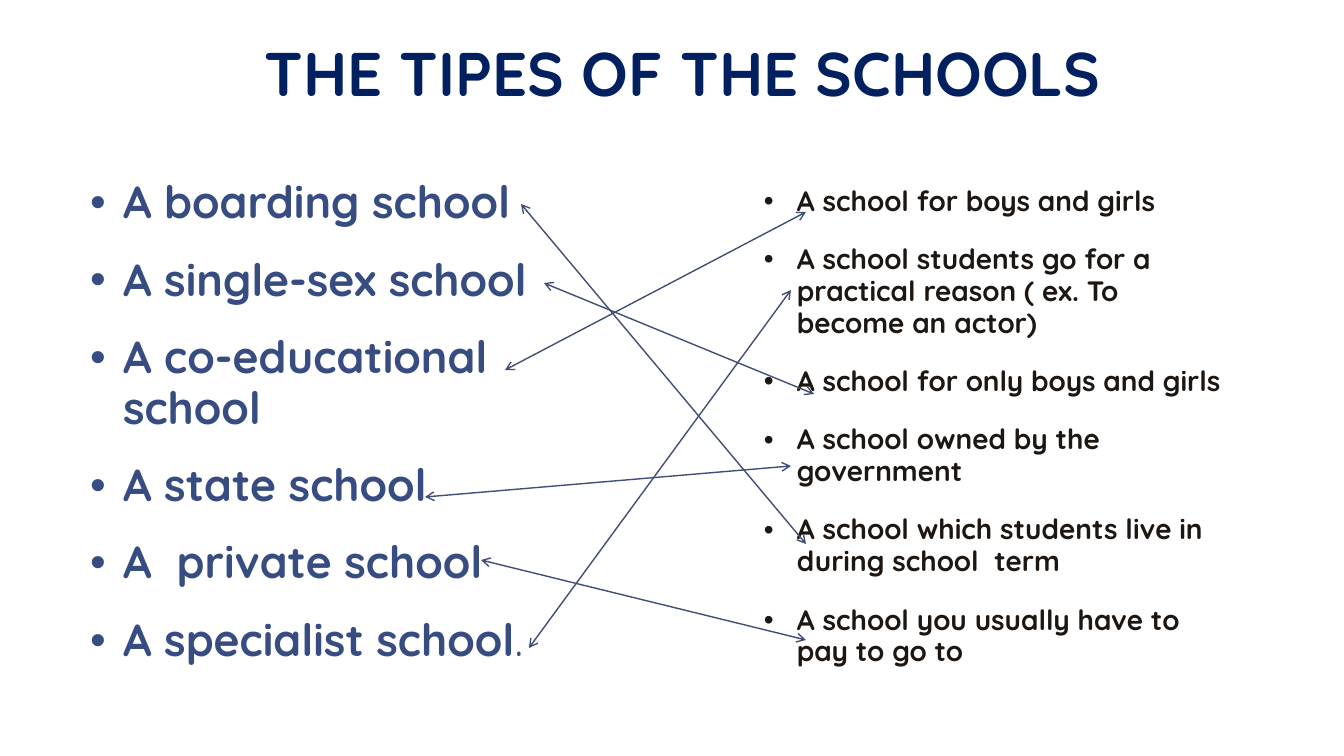
from lxml.etree import SubElement
from pptx import Presentation
from pptx.dml.color import RGBColor
from pptx.enum.shapes import MSO_CONNECTOR as Connector
from pptx.enum.text import MSO_ANCHOR as Anchor, PP_ALIGN as Align
from pptx.oxml.ns import qn
from pptx.util import Emu, Pt

TITLE = "THE TIPES OF THE SCHOOLS"
SCHOOLS = [
    ["A boarding school"],
    ["A single-sex school"],
    ["A co-educational school"],
    ["A state school"],
    ["A  private school"],
    ["A specialist school", "."],
]
MEANINGS = [
    ["A school for boys and girls"],
    ["A school students go for a practical reason ( ex. To become an actor)"],
    ["A school for only boys and girls"],
    ["A school owned by the government"],
    ["A school which students live in during school  term"],
    ["A school you usually have to pay to go to"],
]
MATCHES = [
    ((521, 204), (806, 544)),
    ((544, 283), (814, 394)),
    ((505, 370), (806, 212)),
    ((425, 497), (791, 466)),
    ((481, 560), (806, 640)),
    ((529, 648), (791, 290)),
]
FONT = "Quicksand"
NAVY, BLUE, DARK, LINE, WHITE = "002060", "374C81", "1D1611", "414E77", "FFFFFF"
INDENT = 33


def px(value):
    return Emu(round(value * 914400 / 100.8))


def color(code):
    return RGBColor.from_string(code)


def add_box(page, place, anchor):
    frame = page.shapes.add_textbox(*map(px, place)).text_frame
    frame.word_wrap = True
    frame.vertical_anchor = anchor
    frame.margin_left = frame.margin_right = px(13)
    frame.margin_top = frame.margin_bottom = px(7)
    return frame


def style(span, size, code, bold=True):
    span.font.name = FONT
    span.font.size = Pt(size)
    span.font.bold = bold
    span.font.color.rgb = color(code)


def add_title(page):
    para = add_box(page, (123, 8, 1120, 108), Anchor.BOTTOM).paragraphs[0]
    para.text = TITLE
    para.alignment = Align.CENTER
    para.line_spacing = 0.85
    style(para.runs[0], 44, NAVY)


def add_list(page, place, items, size, code):
    frame = add_box(page, place, Anchor.TOP)
    for index, parts in enumerate(items):
        para = frame.add_paragraph() if index else frame.paragraphs[0]
        para.line_spacing = 0.95
        para.space_before = Pt(18.7 if index else 0)
        props = para._p.get_or_add_pPr()
        props.set("marL", str(px(INDENT)))
        props.set("indent", str(-px(INDENT)))
        SubElement(props, qn("a:buFont"), typeface="Arial")
        SubElement(props, qn("a:buChar"), char="•")
        for order, part in enumerate(parts):
            span = para.add_run()
            span.text = part
            style(span, size, code, bold=order == 0)


def add_match(page, start, end):
    arrow = page.shapes.add_connector(Connector.STRAIGHT, *map(px, start + end))
    arrow.line.color.rgb = color(LINE)
    arrow.line.width = Pt(1)
    outline = arrow.line._get_or_add_ln()
    for tip in ("a:headEnd", "a:tailEnd"):
        SubElement(outline, qn(tip), type="arrow")
    SubElement(arrow._element.spPr, qn("a:effectLst"))


def main():
    deck = Presentation()
    deck.slide_width, deck.slide_height = px(1344), px(756)
    page = deck.slides.add_slide(deck.slide_layouts[6])
    page.background.fill.solid()
    page.background.fill.fore_color.rgb = color(WHITE)
    add_title(page)
    add_list(page, (77, 171, 555, 509), SCHOOLS, 32, BLUE)
    add_list(page, (751, 179, 492, 501), MEANINGS, 20, DARK)
    for start, end in MATCHES:
        add_match(page, start, end)
    deck.save("out.pptx")


if __name__ == "__main__":
    main()
